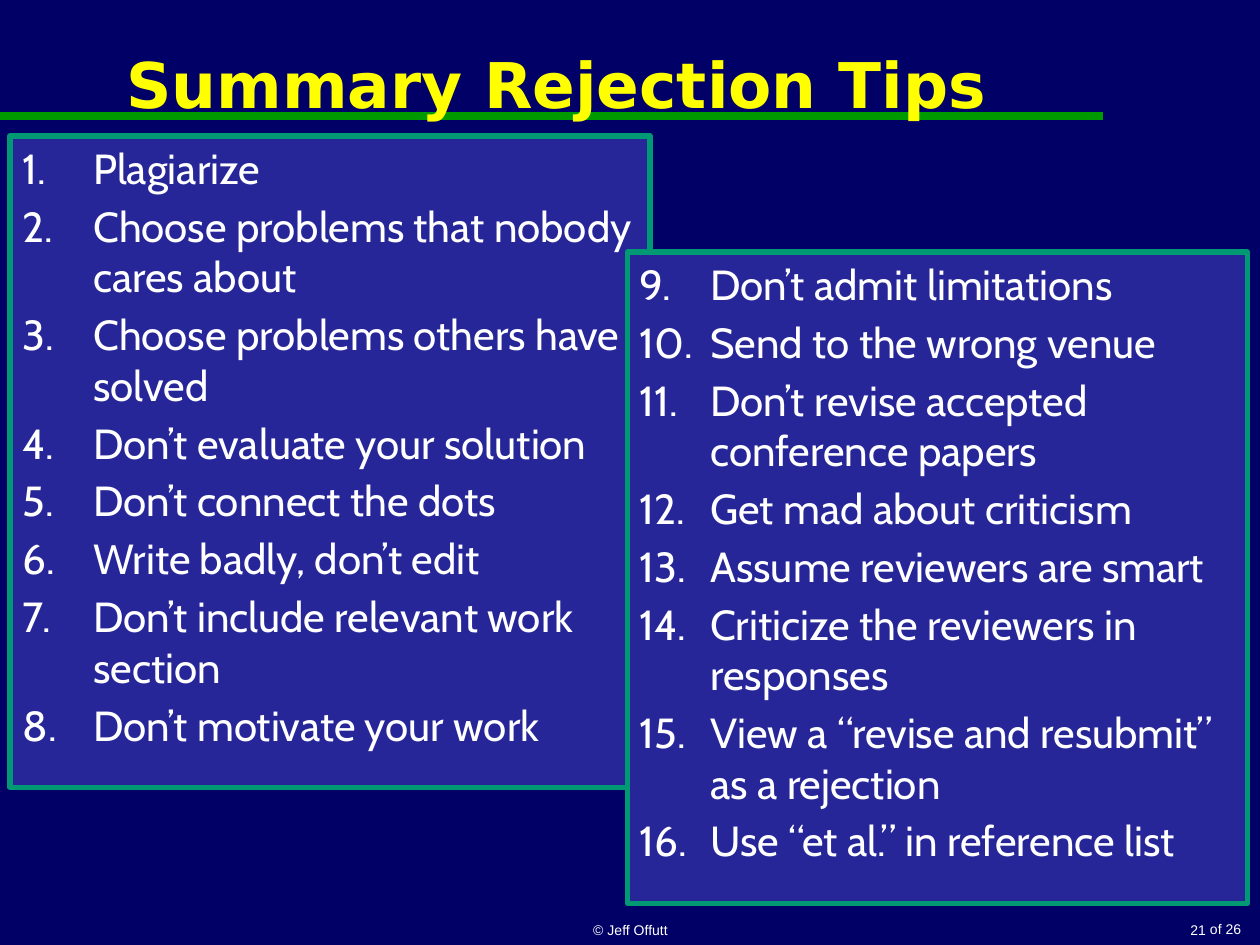
from dataclasses import dataclass

from lxml.etree import SubElement
from pptx import Presentation
from pptx.dml.color import RGBColor
from pptx.enum.shapes import MSO_CONNECTOR as Connector, MSO_SHAPE as Preset
from pptx.enum.text import MSO_ANCHOR as Anchor, MSO_AUTO_SIZE as AutoSize, PP_ALIGN as Align
from pptx.oxml.ns import qn
from pptx.util import Inches, Pt


@dataclass(frozen=True)
class Theme:
    """Colours, fonts and type sizes of the slide."""
    background: str = "000066"
    panel: str = "262699"
    border: str = "009973"
    rule: str = "009900"
    title: str = "FFFF00"
    text: str = "FFFFFF"
    title_font: str = "DejaVu Sans"
    list_font: str = "Cabin"
    footer_font: str = "Arial"
    title_size: int = 36
    list_size: int = 24
    footer_size: int = 8
    item_gap: float = 4.3


class SlideBuilder:
    """Adds styled elements to one slide."""

    def __init__(self, slide, theme):
        self.slide = slide
        self.theme = theme
        fill = slide.background.fill
        fill.solid()
        fill.fore_color.rgb = RGBColor.from_string(theme.background)

    def place(self, shape, box):
        """Moves a shape to left, top, width and height in inches."""
        shape.left, shape.top, shape.width, shape.height = map(Inches, box)

    def format_runs(self, paragraph, name, size, color, bold=False):
        """Sets the font of every run in a paragraph."""
        for run in paragraph.runs:
            run.font.name = name
            run.font.size = Pt(size)
            run.font.bold = bold
            run.font.color.rgb = RGBColor.from_string(color)

    def title(self, text, box):
        """Fills the title placeholder."""
        shape = self.slide.shapes.title
        self.place(shape, box)
        frame = shape.text_frame
        frame.text = text
        frame.auto_size = AutoSize.NONE
        frame.vertical_anchor = Anchor.MIDDLE
        paragraph = frame.paragraphs[0]
        paragraph.alignment = Align.CENTER
        self.format_runs(paragraph, self.theme.title_font, self.theme.title_size,
                         self.theme.title, bold=True)

    def rule(self, start, end, width):
        """Draws a line behind the title."""
        line = self.slide.shapes.add_connector(Connector.STRAIGHT, *map(Inches, start + end))
        line.line.color.rgb = RGBColor.from_string(self.theme.rule)
        line.line.width = Pt(width)
        SubElement(line.element.spPr, qn("a:effectLst"))
        self.slide.shapes.title.element.addprevious(line.element)

    def rectangle(self, box):
        """Adds a plain rectangle without a shadow."""
        shape = self.slide.shapes.add_shape(Preset.RECTANGLE, *map(Inches, box))
        shape.shadow.inherit = False
        return shape

    def numbered_panel(self, shape, box, items, first=1):
        """Turns a shape into a bordered panel with a numbered list."""
        theme = self.theme
        self.place(shape, box)
        shape.fill.solid()
        shape.fill.fore_color.rgb = RGBColor.from_string(theme.panel)
        shape.line.color.rgb = RGBColor.from_string(theme.border)
        shape.line.width = Pt(3)
        frame = shape.text_frame
        frame.text = "\n".join(items)
        frame.word_wrap = True
        frame.auto_size = AutoSize.NONE
        frame.vertical_anchor = Anchor.TOP
        for index, paragraph in enumerate(frame.paragraphs):
            properties = paragraph._p.get_or_add_pPr()
            properties.set("marL", str(Inches(0.56)))
            properties.set("indent", str(Inches(-0.56)))
            SubElement(properties, qn("a:buFont"), typeface=theme.list_font)
            SubElement(properties, qn("a:buAutoNum"), type="arabicPeriod", startAt=str(first))
            paragraph.alignment = Align.LEFT
            paragraph.space_before = Pt(theme.item_gap if index else 0)
            self.format_runs(paragraph, theme.list_font, theme.list_size, theme.text)

    def footer(self, text, box, alignment, anchor=Anchor.BOTTOM, wrap=True):
        """Adds a small footer text."""
        frame = self.slide.shapes.add_textbox(*map(Inches, box)).text_frame
        frame.text = text
        frame.word_wrap = wrap
        frame.vertical_anchor = anchor
        paragraph = frame.paragraphs[0]
        paragraph.alignment = alignment
        self.format_runs(paragraph, self.theme.footer_font, self.theme.footer_size, self.theme.text)


WRITING_TIPS = [
    "Plagiarize",
    "Choose problems that nobody cares about",
    "Choose problems others have solved",
    "Don’t evaluate your solution",
    "Don’t connect the dots",
    "Write badly, don’t edit",
    "Don’t include relevant work section",
    "Don’t motivate your work",
]
REVIEW_TIPS = [
    "Don’t admit limitations",
    "Send to the wrong venue",
    "Don’t revise accepted conference papers",
    "Get mad about criticism",
    "Assume reviewers are smart",
    "Criticize the reviewers in responses",
    "View a “revise and resubmit” as a rejection",
    "Use “et al.” in reference list",
]


def main():
    presentation = Presentation()
    presentation.slide_width = Inches(10)
    presentation.slide_height = Inches(7.5)
    slide = presentation.slides.add_slide(presentation.slide_layouts[1])
    builder = SlideBuilder(slide, Theme())

    builder.title("Summary Rejection Tips", (0.08, 0, 8.67, 1.33))
    builder.rule((0, 0.92), (8.75, 0.92), 4.5)
    builder.numbered_panel(slide.placeholders[1], (0.08, 1.08, 5.08, 5.17), WRITING_TIPS)
    review_box = (4.98, 2, 4.92, 5.17)
    builder.numbered_panel(builder.rectangle(review_box), review_box, REVIEW_TIPS,
                           first=len(WRITING_TIPS) + 1)
    builder.footer("© Jeff Offutt", (3.42, 7.17, 3.17, 0.33), Align.CENTER)
    builder.footer("21", (7.92, 7.17, 1.75, 0.33), Align.RIGHT)
    builder.footer("of 26", (9.5, 7.26, 0.45, 0.24), Align.RIGHT, Anchor.TOP, wrap=False)
    presentation.save("out.pptx")


if __name__ == "__main__":
    main()
